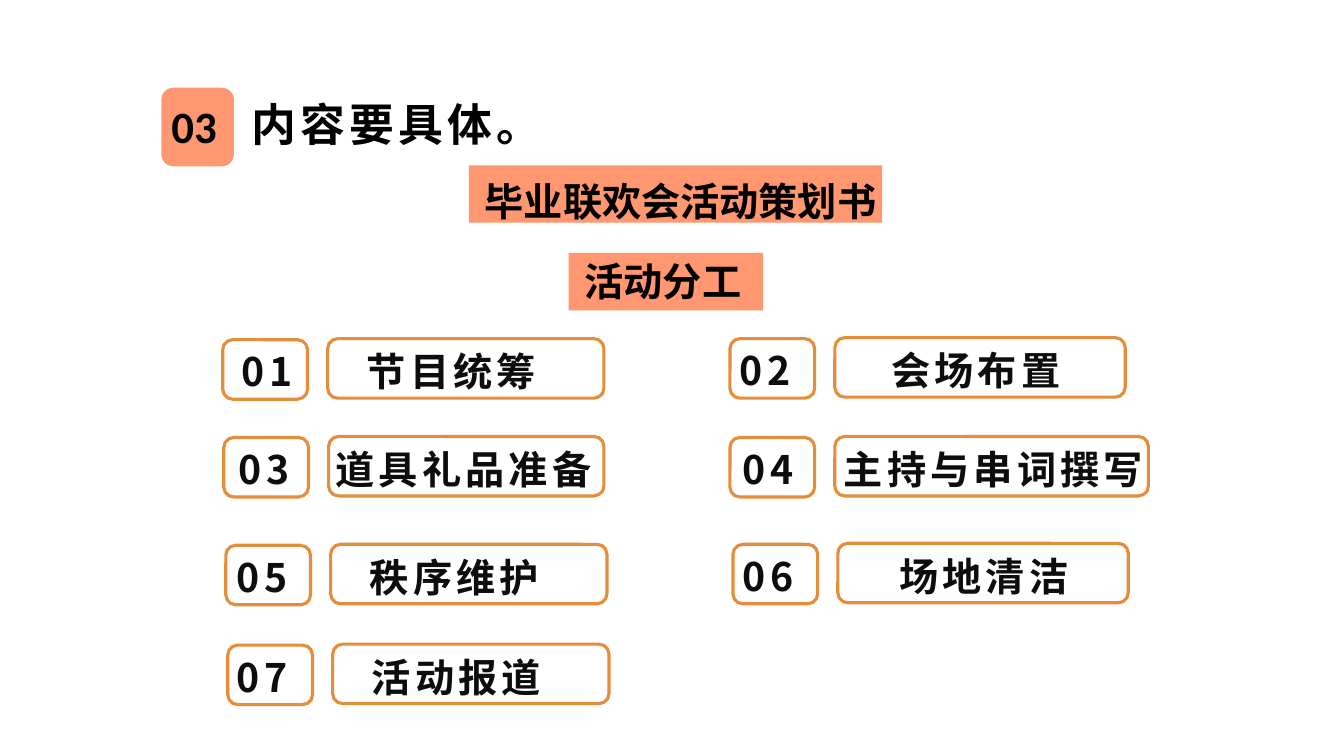
from pptx import Presentation
from pptx.dml.color import RGBColor
from pptx.enum.shapes import MSO_SHAPE
from pptx.enum.text import MSO_ANCHOR, MSO_AUTO_SIZE, PP_ALIGN
from pptx.oxml.ns import qn
from pptx.util import Inches, Pt
from lxml.etree import SubElement

TITLE = "内容要具体。"
SECTION_NUMBER = "03"
# text, banner (left, top, width), text (left, top, width), alignment
BANNERS = [
    ("毕业联欢会活动策划书", (4.65, 1.64, 4.1), (4.62, 1.71, 4.26), PP_ALIGN.CENTER),
    ("活动分工", (5.64, 2.51, 1.93), (5.7, 2.5, 1.91), PP_ALIGN.LEFT),
]
# number, task, card left, card top, task card width, number text left, task text left
TASKS = [
    ("01", "节目统筹", 2.21, 3.37, 2.74, 2.3, 3.54),
    ("02", "会场布置", 7.24, 3.36, 2.88, 7.24, 8.74),
    ("03", "道具礼品准备", 2.22, 4.34, 2.73, 2.27, 3.23),
    ("04", "主持与串词撰写", 7.24, 4.34, 3.11, 7.27, 8.27),
    ("05", "秩序维护", 2.24, 5.41, 2.74, 2.25, 3.57),
    ("06", "场地清洁", 7.27, 5.4, 2.88, 7.27, 8.82),
    ("07", "活动报道", 2.26, 6.4, 2.74, 2.25, 3.59),
]
CORAL, ORANGE, BLACK, INK = "FF9770", "E58D3A", "000000", "0D0D0D"
LATIN_FONT, CHINESE_FONT = "Calibri", "Noto Sans CJK SC"
NUMBER_WIDTH, CARD_HEIGHT, TEXT_HEIGHT = 0.84, 0.59, 0.57
CARD_STEP = 1.04  # from number card to task card


def color(value):
    return RGBColor.from_string(value)


def write(box, text, size, font, ink, align=PP_ALIGN.LEFT, spacing=0, wrap=True):
    frame = box.text_frame
    frame.word_wrap = wrap
    frame.auto_size = MSO_AUTO_SIZE.NONE
    frame.vertical_anchor = MSO_ANCHOR.TOP
    para = frame.paragraphs[0]
    para.alignment = align
    span = para.add_run()
    span.text = text
    span.font.size = Pt(size)
    span.font.bold = True
    span.font.name = font
    span.font.color.rgb = color(ink)
    properties = span.font._element
    SubElement(properties, qn("a:ea")).set("typeface", CHINESE_FONT)
    if spacing:
        properties.set("spc", str(spacing * 100))


def add_text(page, left, top, width, height, *args, **options):
    box = page.shapes.add_textbox(*map(Inches, (left, top, width, height)))
    write(box, *args, **options)


def add_panel(page, kind, left, top, width, height, fill=None, line=None):
    panel = page.shapes.add_shape(kind, *map(Inches, (left, top, width, height)))
    panel.shadow.inherit = False
    if fill:
        panel.fill.solid()
        panel.fill.fore_color.rgb = color(fill)
    else:
        panel.fill.background()
    if line:
        panel.line.color.rgb = color(line)
        panel.line.width = Pt(2.25)
    else:
        panel.line.fill.background()


def add_task(page, number, task, left, top, task_width, number_left, task_left):
    text_top = top + 0.03
    cards = [
        (number, left, top, NUMBER_WIDTH, number_left, 0.81),
        (task, left + CARD_STEP, top - 0.01, task_width, task_left, 0.45 * len(task) + 0.5),
    ]
    for text, card_left, card_top, card_width, text_left, text_width in cards:
        add_panel(page, MSO_SHAPE.FLOWCHART_ALTERNATE_PROCESS,
                  card_left, card_top, card_width, CARD_HEIGHT, line=ORANGE)
        add_text(page, text_left, text_top, text_width, TEXT_HEIGHT,
                 text, 28, CHINESE_FONT, INK, spacing=3)


def main():
    deck = Presentation()
    deck.slide_width, deck.slide_height = Inches(13.33), Inches(7.5)
    page = deck.slides.add_slide(deck.slide_layouts[5])

    title = page.shapes.title
    title.left, title.top, title.width, title.height = map(Inches, (2.39, 0.91, 3.23, 0.63))
    write(title, TITLE, 32, LATIN_FONT, BLACK, spacing=3)

    add_panel(page, MSO_SHAPE.ROUNDED_RECTANGLE, 1.6, 0.87, 0.72, 0.78, fill=CORAL)
    add_text(page, 1.6, 0.93, 0.65, 0.64, SECTION_NUMBER, 32, LATIN_FONT, BLACK,
             align=PP_ALIGN.CENTER, wrap=False)

    for text, banner, place, align in BANNERS:
        add_panel(page, MSO_SHAPE.RECTANGLE, *banner, TEXT_HEIGHT, fill=CORAL)
        add_text(page, *place, TEXT_HEIGHT, text, 28, LATIN_FONT, BLACK, align=align)

    for task in TASKS:
        add_task(page, *task)

    deck.save("out.pptx")


if __name__ == "__main__":
    main()
